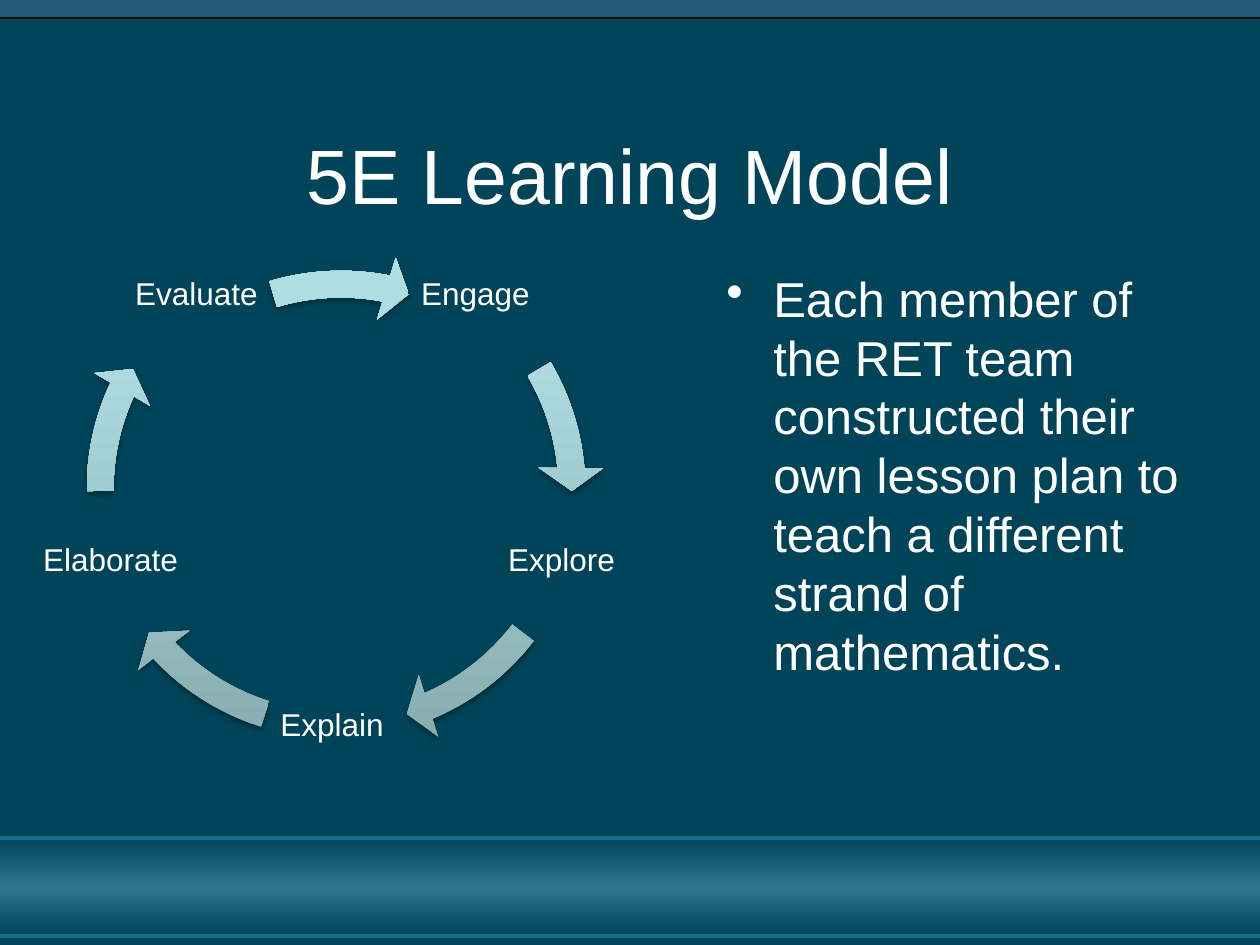
from copy import deepcopy
from dataclasses import dataclass

from lxml import etree
from pptx import Presentation
from pptx.dml.color import RGBColor
from pptx.enum.shapes import MSO_SHAPE
from pptx.enum.text import MSO_ANCHOR, PP_ALIGN
from pptx.oxml.ns import qn
from pptx.util import Emu, Pt

RECTANGLE = MSO_SHAPE.RECTANGLE
CIRCULAR_ARROW = MSO_SHAPE.CIRCULAR_ARROW
MIDDLE, TOP = MSO_ANCHOR.MIDDLE, MSO_ANCHOR.TOP
CENTER, LEFT = PP_ALIGN.CENTER, PP_ALIGN.LEFT
PX = 914400 / 126


@dataclass(frozen=True)
class Theme:
    font: str = "Arial"
    text: str = "FFFFFF"
    background: str = "004459"
    top_band: str = "265D76"
    top_line: str = "0D0D0D"
    footer_line: str = "15708C"
    footer: tuple = ((0, "004459"), (0.5, "31778C"), (1, "004459"))
    arrow: tuple = ((0, "87ABAE"), (0.8, "AFDEE2"), (1, "AFE0E4"))
    title_size: int = 44
    body_size: int = 28
    label_size: int = 18


theme = Theme()
prs = Presentation()
prs.slide_width, prs.slide_height = Emu(round(1260 * PX)), Emu(round(945 * PX))
slide = prs.slides.add_slide(prs.slide_layouts[6])
slide.background.fill.solid()
slide.background.fill.fore_color.rgb = RGBColor.from_string(theme.background)


def add_filled(kind, box, paint):
    """Add a borderless shape; paint is one colour or three gradient stops, bottom to top."""
    shape = slide.shapes.add_shape(kind, *(Emu(round(v * PX)) for v in box))
    shape.shadow.inherit = False
    shape.line.fill.background()
    if isinstance(paint, str):
        shape.fill.solid()
        shape.fill.fore_color.rgb = RGBColor.from_string(paint)
        return shape
    shape.fill.gradient()
    shape.fill.gradient_angle = 90
    stop_list = shape._element.spPr.find(qn("a:gradFill")).find(qn("a:gsLst"))
    stop_list.append(deepcopy(stop_list[-1]))
    for stop, (position, color) in zip(shape.fill.gradient_stops, paint):
        stop.position = position
        stop.color.rgb = RGBColor.from_string(color)
    return shape


def add_text(text, box, size, align=CENTER, anchor=MIDDLE, inset=None):
    """Add a wrapped text box and return its paragraph."""
    frame = slide.shapes.add_textbox(*(Emu(round(v * PX)) for v in box)).text_frame
    frame.word_wrap = True
    frame.vertical_anchor = anchor
    if inset is not None:
        frame.margin_left = frame.margin_right = Emu(round(inset * PX))
        frame.margin_top = frame.margin_bottom = Emu(round(inset * PX))
    frame.text = text
    paragraph = frame.paragraphs[0]
    paragraph.alignment = align
    font = paragraph.runs[0].font
    font.name, font.size = theme.font, Pt(size)
    font.color.rgb = RGBColor.from_string(theme.text)
    return paragraph


# Bands and rules across the slide: top, height, paint
for top, height, paint in (
    (838, 98, theme.footer),
    (0, 19, theme.top_band),
    (17, 2, theme.top_line),
    (832, 1, theme.background),
    (941, 4, theme.background),
    (836, 4, theme.footer_line),
    (934, 4, theme.footer_line),
):
    add_filled(RECTANGLE, (0, top, 1260, height), paint)

add_text("5E Learning Model", (21, 95, 1218, 157), theme.title_size)

# Learning cycle: label, its corner, the next arrow's corner, arrow end and start
LABEL_SIDE, CYCLE_SIDE = 143, 536
cycle = (
    ("Engage", (404, 224), (68, 221), 212.93, 197.66),
    ("Explore", (490, 490), (68, 221), 40.15, 22.54),
    ("Explain ", (265, 655), (68, 221), 82.11, 64.49),
    ("Elaborate", (39, 490), (68, 221), 122.98, 107.71),
    ("Evaluate", (125, 224), (73, 252), 168.66, 151.98),
)
for stage, label_corner, arrow_corner, arrow_end, arrow_start in cycle:
    label = add_text(stage, (*label_corner, LABEL_SIDE, LABEL_SIDE), theme.label_size, inset=2)
    label.line_spacing = 0.9
    arrow = add_filled(CIRCULAR_ARROW, (*arrow_corner, CYCLE_SIDE, CYCLE_SIDE), theme.arrow)
    for index, value in enumerate((0.05, 3.36, arrow_end, arrow_start, 0.06)):
        arrow.adjustments[index] = value
    effects = arrow._element.spPr.find(qn("a:effectLst"))
    shadow = etree.SubElement(effects, qn("a:outerShdw"), blurRad="40000", dist="23000",
                              dir="5400000", rotWithShape="0")
    shadow_color = etree.SubElement(shadow, qn("a:srgbClr"), val="000000")
    etree.SubElement(shadow_color, qn("a:alpha"), val="35000")

lesson = add_text(
    "Each member of the RET team constructed their own lesson plan to teach "
    "a different strand of mathematics.",
    (714, 262, 494, 504), theme.body_size, LEFT, TOP)
lesson_format = lesson._p.get_or_add_pPr()
lesson_format.set("marL", str(round(47 * PX)))
lesson_format.set("indent", str(round(-47 * PX)))
etree.SubElement(lesson_format, qn("a:buChar"), char="•")

prs.save("out.pptx")
